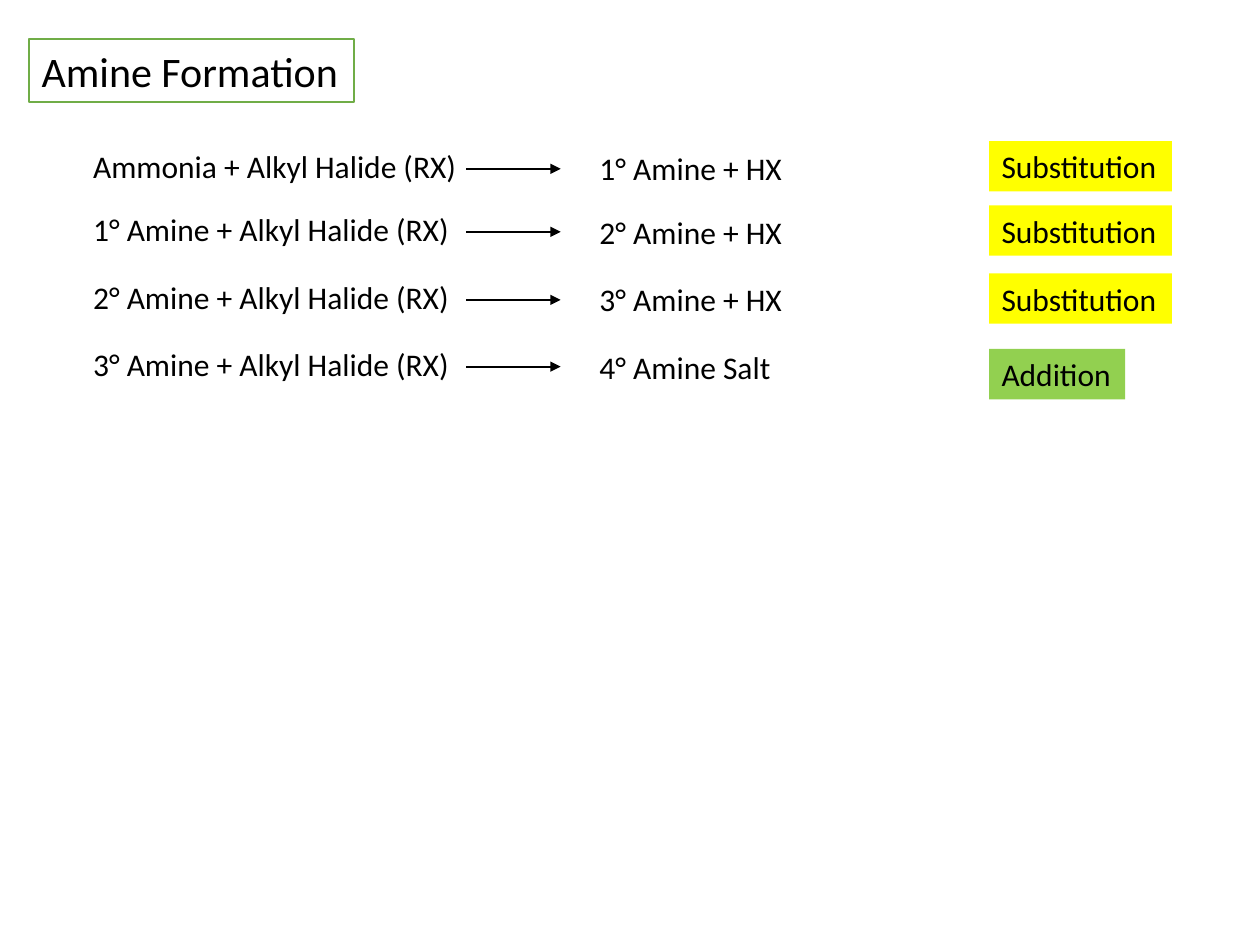
"""Build a slide that lists the steps of amine formation."""
from dataclasses import dataclass

from lxml.etree import SubElement
from pptx import Presentation
from pptx.dml.color import RGBColor as Rgb
from pptx.enum.shapes import MSO_CONNECTOR as Link, MSO_SHAPE as Form
from pptx.enum.text import MSO_ANCHOR as Anchor, MSO_AUTO_SIZE as Fit, PP_ALIGN as Align
from pptx.oxml.ns import qn
from pptx.util import Inches, Pt

HUES = {"ink": "000000", "paper": "FFFFFF", "edge": "70AD47",
        "Substitution": "FFFF00", "Addition": "92D050"}
WIDE = {"Substitution": 1.45, "Addition": 1.08}
HIGH = 0.4


@dataclass
class Step:
    """One reaction with the tops of its parts."""
    start: str
    end: str
    kind: str
    top: float
    end_top: float
    tag_top: float
    end_wide: float = 1.67


STEPS = [
    Step("Ammonia", "1° Amine + HX", "Substitution", 1.12, 1.13, 1.12),
    Step("1° Amine", "2° Amine + HX", "Substitution", 1.62, 1.64, 1.63),
    Step("2° Amine", "3° Amine + HX", "Substitution", 2.16, 2.17, 2.17),
    Step("3° Amine", "4° Amine Salt", "Addition", 2.69, 2.71, 2.77, 1.57),
]


def hue(name: str) -> Rgb:
    """Look up a colour."""
    return Rgb.from_string(HUES[name])


def paint(shape, name: str) -> None:
    """Fill a shape with one colour."""
    shape.fill.solid()
    shape.fill.fore_color.rgb = hue(name)


def write(shape, text: str, size: int = 18, fit: Fit = Fit.SHAPE_TO_FIT_TEXT) -> None:
    """Put one left-aligned run into a shape."""
    frame = shape.text_frame
    frame.word_wrap = False
    frame.auto_size = fit
    frame.vertical_anchor = Anchor.TOP
    para = frame.paragraphs[0]
    para.alignment = Align.LEFT
    run = para.add_run()
    run.text = text
    run.font.size = Pt(size)
    run.font.name = "Calibri"
    run.font.color.rgb = hue("ink")


def head(slide, text: str) -> None:
    """Set the framed title at a fixed size."""
    title = slide.shapes.title
    title.left, title.top = Inches(0.23), Inches(0.31)
    title.width, title.height = Inches(2.58), Inches(0.5)
    paint(title, "paper")
    title.line.color.rgb = hue("edge")
    title.line.width = Pt(1)
    write(title, text, 24, Fit.NONE)


def label(slide, text: str, left: float, top: float, wide: float) -> None:
    """Add a plain text box."""
    box = slide.shapes.add_textbox(Inches(left), Inches(top), Inches(wide), Inches(HIGH))
    write(box, text)


def tag(slide, kind: str, top: float) -> None:
    """Add a coloured tag that names the kind of reaction."""
    box = slide.shapes.add_shape(Form.RECTANGLE, Inches(7.85), Inches(top),
                                 Inches(WIDE[kind]), Inches(HIGH))
    box.shadow.inherit = False
    paint(box, kind)
    box.line.fill.background()
    write(box, kind)


def arrow(slide, top: float) -> None:
    """Add a level arrow to the right."""
    line = slide.shapes.add_connector(Link.STRAIGHT, Inches(3.7), Inches(top),
                                      Inches(4.45), Inches(top))
    line.line.color.rgb = hue("ink")
    line.line.width = Pt(1)
    SubElement(line.line._get_or_add_ln(), qn("a:tailEnd"), type="triangle")
    SubElement(line._element.spPr, qn("a:effectLst"))


def draw(slide, step: Step) -> None:
    """Draw one reaction row."""
    label(slide, f"{step.start} + Alkyl Halide (RX)", 0.64, step.top, 3.18)
    arrow(slide, step.top + 0.22)
    label(slide, step.end, 4.66, step.end_top, step.end_wide)
    tag(slide, step.kind, step.tag_top)


def main() -> None:
    """Build and save the deck."""
    deck = Presentation()
    deck.slide_width, deck.slide_height = Inches(10), Inches(7.5)
    slide = deck.slides.add_slide(deck.slide_layouts[5])
    head(slide, "Amine Formation")
    for step in STEPS:
        draw(slide, step)
    deck.save("out.pptx")


if __name__ == "__main__":
    main()
